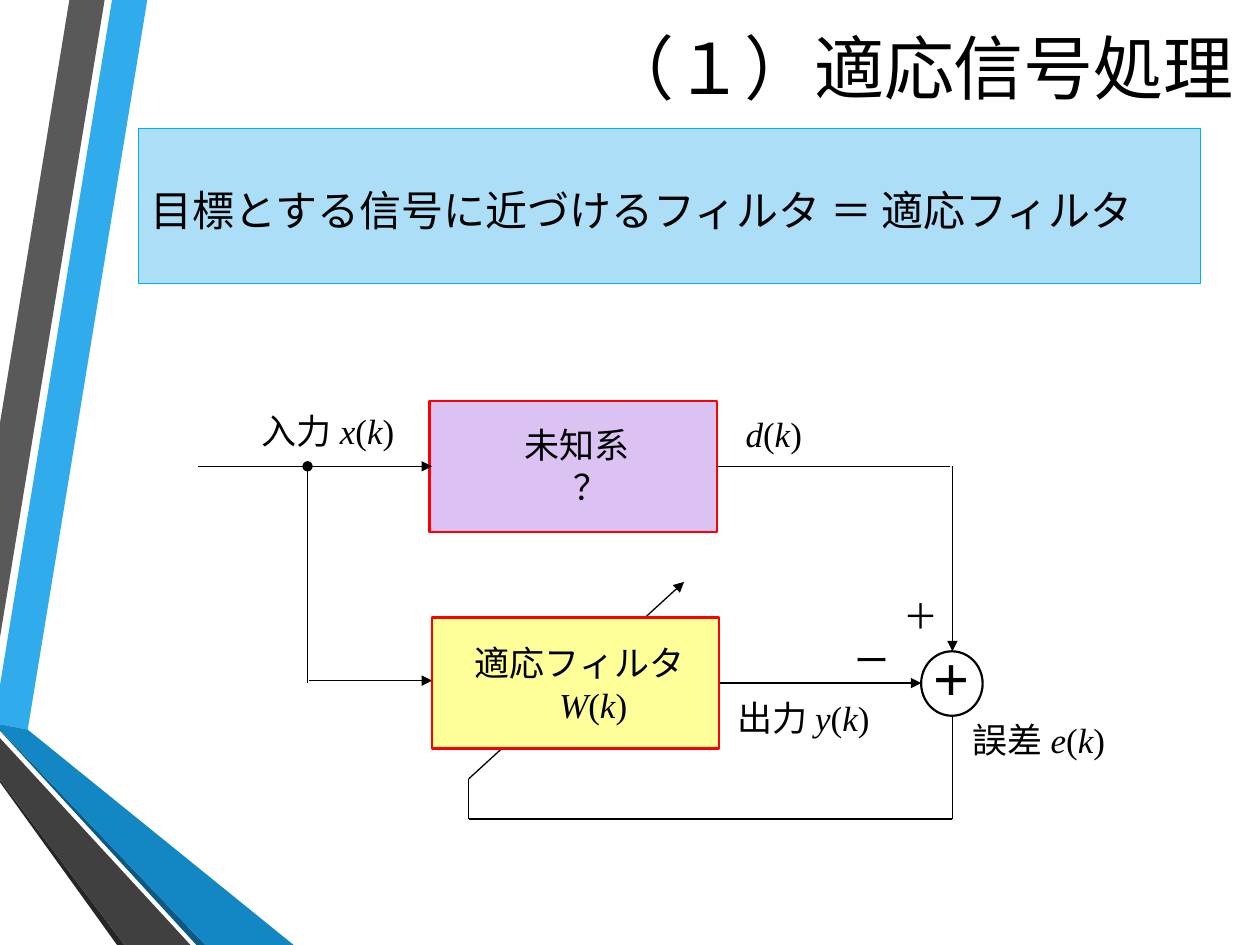
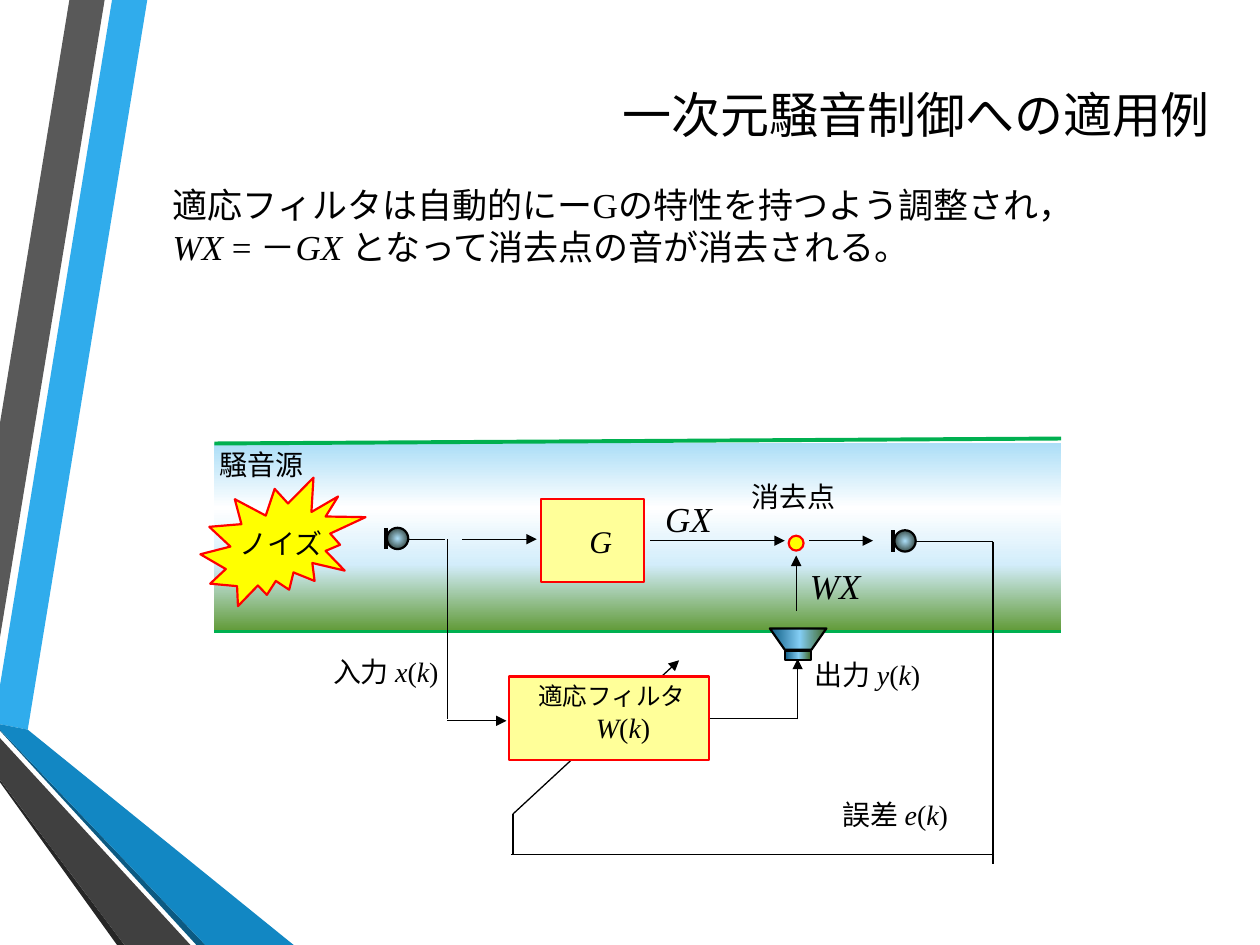
import dataclasses
import itertools

import pptx
import pptx.dml.color
import pptx.enum.shapes
import pptx.enum.text
import pptx.oxml
import pptx.oxml.ns
import pptx.util

Cm, Pt = pptx.util.Cm, pptx.util.Pt
Form = pptx.enum.shapes.MSO_SHAPE
Align = pptx.enum.text.PP_ALIGN
Anchor = pptx.enum.text.MSO_ANCHOR
qn = pptx.oxml.ns.qn

WIDE, HIGH = 25.4, 19.05
BLACK, RED, GREEN = "000000", "FF0000", "00B050"
CREAM, YELLOW = "FFFF99", "FFFF00"
SERIF, SANS = "Times New Roman", "Calibri"
THIN, MID, THICK = 0.75, 1.25, 2.25
STEEL = [(0, "0C5A82"), (53, "83CDF4"), (100, "3F6623")]
AIR = [(0, "ACDEF7"), (34, "FFFFFF"), (64, "D3EDFB"), (100, "5F9934")]
BALL = [(0, "ACDEF7"), (100, "101909")]
BANDS = [
    ("30ACEC", [(0, 13.82), (0, 14.6), (0.56, 14.71), (2.97, 0), (2.26, 0)]),
    ("595959", [(2.11, 0), (1.4, 0), (0, 8.53), (0, 12.85)]),
    ("262626", [(0, 15.72), (0, 15.77), (2.36, HIGH), (2.51, HIGH)]),
    ("0C5A82", [(0, 14.71), (0, 14.73), (3.96, HIGH), (4.14, HIGH)]),
    ("1287C3", [(0, 14.71), (4.14, HIGH), (5.92, HIGH), (0.56, 14.71), (0, 14.6)]),
    ("404040", [(0, 15.72), (2.51, HIGH), (3.84, HIGH), (0, 14.88)]),
]


@dataclasses.dataclass
class Area:
    """A region of a slide whose parts are placed from its corner."""
    slide: object
    left: float = 0
    top: float = 0

    def spot(self, x, y):
        """Return the slide position of a point in the region."""
        return Cm(self.left + x), Cm(self.top + y)


def tint(code):
    """Turn a hex string into a colour."""
    return pptx.dml.color.RGBColor.from_string(code)


def paint(part, fill, line=None, width=MID):
    """Give a shape its fill and outline without a shadow."""
    part.shadow.inherit = False
    part.fill.solid()
    part.fill.fore_color.rgb = tint(fill)
    if line:
        part.line.color.rgb = tint(line)
        part.line.width = Pt(width)
    else:
        part.line.fill.background()


def blend(part, stops, angle=None):
    """Fill a shape with a linear gradient, or a round one without angle."""
    part.fill.gradient()
    node = part._element.spPr.find(qn("a:gradFill"))
    marks = "".join(
        f'<a:gs pos="{pos * 1000}"><a:srgbClr val="{code}"/></a:gs>'
        for pos, code in stops)
    if angle is None:
        way = ('<a:path path="circle"><a:fillToRect l="50000" t="50000" '
               'r="50000" b="50000"/></a:path>')
    else:
        way = f'<a:lin ang="{angle * 60000}" scaled="1"/>'
    fresh = pptx.oxml.parse_xml(
        f'<a:gradFill {pptx.oxml.ns.nsdecls("a")} rotWithShape="1">'
        f'<a:gsLst>{marks}</a:gsLst>{way}</a:gradFill>')
    node.getparent().replace(node, fresh)


def block(area, x, y, wide, high, fill="FFFFFF", line=None, form=Form.RECTANGLE,
          width=MID):
    """Add a preset shape to a region."""
    part = area.slide.shapes.add_shape(
        form, *area.spot(x, y), Cm(wide), Cm(high))
    paint(part, fill, line, width)
    return part


def write(part, text, size=20, font=SERIF, align=Align.LEFT, anchor=Anchor.TOP,
          bold=False, space=None, gap=0):
    """Write lines in a shape; asterisks enclose italics, size may be a list."""
    frame = part.text_frame
    frame.word_wrap = True
    frame.vertical_anchor = anchor
    rows = text.split("\n")
    sizes = size if isinstance(size, list) else [size] * len(rows)
    for num, (row, pts) in enumerate(zip(rows, sizes)):
        para = frame.add_paragraph() if num else frame.paragraphs[0]
        para.alignment = align
        para.space_before = para.space_after = Pt(gap)
        if space:
            para.line_spacing = Pt(space)
        for turn, piece in enumerate(row.split("*")):
            if piece:
                run = para.add_run()
                run.text = piece
                run.font.name, run.font.size = font, Pt(pts)
                run.font.bold, run.font.italic = bold, turn % 2 == 1
                run.font.color.rgb = tint(BLACK)


def label(area, text, x, y, wide, high=1.12, **form):
    """Add a text box to a region."""
    part = area.slide.shapes.add_textbox(
        *area.spot(x, y), Cm(wide), Cm(high))
    write(part, text, **form)


def route(area, *points, color=BLACK, width=THIN, head=None, tail=None):
    """Join points with straight lines, with optional end marks."""
    last = len(points) - 2
    for num, (start, end) in enumerate(itertools.pairwise(points)):
        line = area.slide.shapes.add_connector(
            pptx.enum.shapes.MSO_CONNECTOR.STRAIGHT,
            *area.spot(*start), *area.spot(*end))
        line.line.color.rgb = tint(color)
        line.line.width = Pt(width)
        pen = line.line._get_or_add_ln()
        for tag, kind, site in (("a:headEnd", head, 0), ("a:tailEnd", tail, last)):
            if kind and num == site:
                pen.append(pen.makeelement(qn(tag), {"type": kind}))
        props = line._element.spPr
        props.append(props.makeelement(qn("a:effectLst"), {}))


def arrow(area, *points):
    """Draw a route that ends in an arrowhead."""
    route(area, *points, tail="triangle")


def bands(area):
    """Draw the folded ribbons at the left edge."""
    for code, points in BANDS:
        first, *rest = [area.spot(*point) for point in points]
        path = area.slide.shapes.build_freeform(*first, scale=1)
        path.add_line_segments(rest, close=True)
        paint(path.convert_to_shape(), code)


def title(area, text, size, high):
    """Write a slide title, set to the right."""
    label(area, text, 0, 0, 21.41, high, size=size, font=SANS,
          align=Align.RIGHT, anchor=Anchor.MIDDLE)


def banner(area, text):
    """Draw the blue key statement."""
    part = block(area, 0, 0, 21.41, 3.12, "ACDEF7", "00B0F0", width=THIN)
    write(part, text, size=24, font=SANS, anchor=Anchor.MIDDLE, space=33.6, gap=6)


def system(area):
    """Draw the block diagram of the adaptive filter."""
    arrow(area, (2.22, 5.72), (4.71, 5.72))
    adder = block(area, 14.57, 5.13, 1.24, 1.3, "FFFFFF", BLACK, Form.OVAL)
    frame = adder.text_frame
    frame.margin_left = frame.margin_right = frame.margin_bottom = 0
    frame.margin_top = Cm(0.3)
    write(adder, "＋", size=24, font=SANS, bold=True, space=16,
          align=Align.JUSTIFY, anchor=Anchor.MIDDLE)
    arrow(area, (10.5, 5.77), (14.57, 5.77))
    arrow(area, (15.2, 1.4), (15.2, 5.13))
    arrow(area, (15.2, 6.43), (15.2, 8.51), (5.45, 8.51), (5.45, 7.7), (9.79, 3.73))
    block(area, 4.71, 4.45, 5.79, 2.64, CREAM, RED)
    block(area, 4.66, 0.08, 5.79, 2.64, "DBC2F3", RED)
    for text, x, y, wide, align in (
            ("*d*(*k*)", 10.78, 0.2, 4.27, Align.LEFT),
            (" 適応フィルタ\n　*W*(*k*)", 5.09, 4.8, 5.03, Align.CENTER),
            (" 入力 *x*(*k*)", 0.09, 0.13, 4.11, Align.RIGHT),
            (" 出力 *y*(*k*)", 10.45, 5.92, 3.73, Align.LEFT),
            (" ー", 12.31, 4.75, 1.88, Align.RIGHT),
            (" ＋", 13.3, 3.86, 1.88, Align.RIGHT),
            (" 誤差 *e*(*k*)", 15.2, 6.35, 3.81, Align.LEFT),
            (" 未知系\n　？", 5.04, 0.41, 5.03, Align.CENTER)):
        label(area, text, x, y, wide, align=align)
    arrow(area, (0, 1.4), (4.71, 1.4))
    route(area, (2.2, 1.4), (2.2, 5.77), head="oval")
    route(area, (15.15, 1.4), (10.45, 1.4))


def mike(area):
    """Draw a microphone."""
    ball = block(area, 0.02, 0, 0.43, 0.43, line=BLACK, form=Form.OVAL)
    blend(ball, BALL)
    route(area, (0, 0), (0, 0.43), width=THICK)


def horn(area):
    """Draw a loudspeaker that faces up."""
    cone = block(area, 0, 0, 1.14, 0.43, line=BLACK, form=Form.TRAPEZOID)
    cone.adjustments[0] = 0.7
    cone._element.spPr.xfrm.set("flipV", "1")
    base = block(area, 0.3, 0.46, 0.53, 0.18, line=BLACK)
    for part in (cone, base):
        blend(part, STEEL, 0)


def duct(area):
    """Draw the noise control loop around the duct."""
    def inner(x, y):
        """Return a region inside this one."""
        return Area(area.slide, area.left + x, area.top + y)

    blend(block(area, 0.32, 0.14, 17.07, 3.81), AIR, 90)
    route(area, (0.32, 3.93), (17.39, 3.93), color=GREEN, width=THICK)
    route(area, (14.31, 2.12), (16.02, 2.12), (16.02, 8.62))
    arrow(area, (5.02, 5.73), (6.21, 5.73))
    route(area, (10.3, 5.68), (12.08, 5.68))
    route(area, (16.04, 8.42), (6.31, 8.42))
    arrow(area, (6.34, 8.42), (6.34, 7.61), (9.69, 4.51))
    block(area, 6.26, 4.84, 4.04, 1.68, CREAM, RED)
    horn(inner(11.52, 3.87))
    mike(inner(14.01, 1.89))
    arrow(area, (12.08, 5.7), (12.08, 4.48))
    route(area, (4.08, 2.07), (4.97, 2.07))
    mike(inner(3.78, 1.84))
    route(area, (5.02, 2.07), (5.02, 5.7))
    arrow(area, (5.32, 2.07), (6.82, 2.07))
    block(area, 6.9, 1.26, 2.08, 1.68, CREAM, RED)
    arrow(area, (9.11, 2.1), (11.82, 2.1))
    arrow(area, (12.05, 3.52), (12.05, 2.4))
    arrow(area, (12.31, 2.1), (13.6, 2.1))
    block(area, 11.9, 2, 0.3, 0.3, YELLOW, RED, Form.OVAL)
    route(area, (0.32, 0.14), (17.39, 0.04), color=GREEN, width=THICK)
    block(area, 0.04, 0.83, 3.33, 2.59, YELLOW, RED, Form.EXPLOSION2)
    label(area, " 適応フィルタ\n　*W*(*k*)", 6.44, 4.81, 3.68, 1.63,
          size=[14, 16], align=Align.CENTER)
    label(area, " 入力 *x*(*k*)", 0.98, 4.28, 4.11, size=16, align=Align.RIGHT)
    for text, x, y, wide, size in (
            (" 出力 *y*(*k*)", 12.05, 4.33, 3.73, 16),
            (" 誤差 *e*(*k*)", 12.61, 7.15, 3.81, 16),
            ("*G*", 7.63, 1.59, 1.12, 18),
            (" 消去点", 10.78, 0.75, 3.73, 16),
            (" *GX*", 8.98, 1.11, 2.01, 20),
            (" 騒音源", 0.06, 0.09, 3.73, 16),
            (" ノイズ", 0.45, 1.69, 2.77, 16),
            (" *WX*", 11.9, 2.45, 2.01, 20)):
        label(area, text, x, y, wide, size=size)


def main():
    """Build and save both slides."""
    deck = pptx.Presentation()
    deck.slide_width, deck.slide_height = Cm(WIDE), Cm(HIGH)
    first, second = [deck.slides.add_slide(deck.slide_layouts[6]) for _ in range(2)]
    for slide in (first, second):
        bands(Area(slide))
    title(Area(first, 3.71, 0.18), "（１）適応信号処理", 40, 2.31)
    banner(Area(first, 2.79, 2.59), "目標とする信号に近づけるフィルタ ＝ 適応フィルタ")
    system(Area(first, 4, 8))
    title(Area(second, 3.23, 0.46), "一次元騒音制御への適用例", 28, 3.68)
    label(Area(second, 3.23, 3.58),
          "適応フィルタは自動的にーGの特性を持つよう調整され，\n"
          "*WX *= －*GX *となって消去点の音が消去される。", 0, 0, 21.11, 1.96)
    duct(Area(second, 4, 8.8))
    deck.save("out.pptx")


if __name__ == "__main__":
    main()
